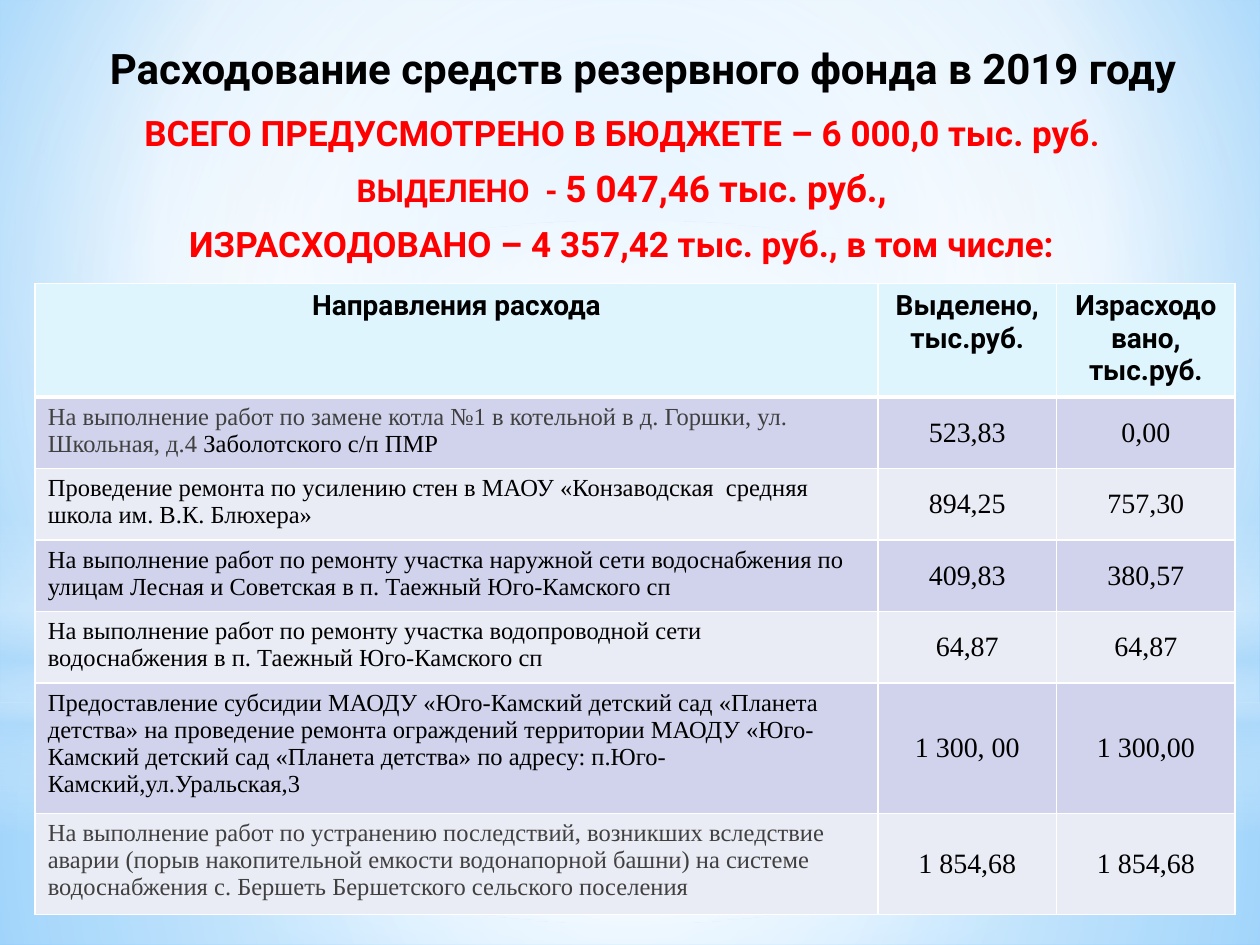
"""Build the slide on reserve fund spending in 2019."""
from dataclasses import dataclass

from lxml.etree import SubElement
from pptx import Presentation
from pptx.dml.color import RGBColor
from pptx.enum.shapes import MSO_SHAPE
from pptx.enum.text import MSO_ANCHOR, PP_ALIGN
from pptx.oxml.ns import qn
from pptx.util import Cm, Pt

HEADING_FONT, BODY_FONT = "Roboto", "Times New Roman"
BLACK, GREY, RED, WHITE = "000000", "404040", "FF0000", "FFFFFF"
PALE_BLUE = "B4DCFA"
HEADER_FILL, ROW_FILLS = "DFF5FD", ("D0D3EB", "E9EBF5")
CENTRE = (50, 50, 50, 50)
THIN, THICK = Pt(1), Pt(3)


@dataclass
class Stop:
    position: int
    colour: str
    opacity: int = 100


@dataclass
class Glow:
    top: float
    height: float
    stops: list[Stop]
    focus: tuple | None = CENTRE
    kind: MSO_SHAPE = MSO_SHAPE.RECTANGLE


@dataclass
class Piece:
    text: str
    size: int
    colour: str


@dataclass
class Expense:
    purpose: list[tuple[str, str]]
    allocated: str
    spent: str
    height: float


BACKGROUND = [Stop(0, "9ED5FF"), Stop(60, WHITE), Stop(100, "5BB9FF")]
GLOWS = [
    Glow(14.17, 4.88, [Stop(0, WHITE, 91), Stop(37, WHITE, 76), Stop(100, PALE_BLUE, 79)]),
    Glow(0, 14.17, [Stop(0, WHITE, 89), Stop(48, WHITE, 62), Stop(100, PALE_BLUE, 79)]),
    Glow(10.46, 6.35, [Stop(0, WHITE, 0), Stop(29, WHITE, 30), Stop(45, PALE_BLUE, 40),
                       Stop(55, WHITE, 26), Stop(65, PALE_BLUE, 60), Stop(100, WHITE, 0)], None),
    Glow(4.45, 14.17, [Stop(0, WHITE), Stop(56, WHITE, 0)], CENTRE, MSO_SHAPE.OVAL),
]
TITLE = [[Piece("Расходование средств резервного фонда в 2019 году", 24, BLACK)]]
TOTALS = [
    [Piece("ВСЕГО ПРЕДУСМОТРЕНО В БЮДЖЕТЕ – 6 000,0 тыс. руб", 20, RED), Piece(".", 18, RED)],
    [Piece("ВЫДЕЛЕНО  - ", 18, RED), Piece("5 047,46 тыс. руб.,", 21, RED)],
    [Piece("ИЗРАСХОДОВАНО – 4 357,42 тыс. руб., в том числе:", 20, RED)],
]
HEADERS = ["Направления расхода", "Выделено, тыс.руб.", "Израсходовано, тыс.руб."]
HEADER_HEIGHT = 2.24
COLUMN_WIDTHS = [16.99, 3.6, 3.6]
EXPENSES = [
    Expense([("На выполнение работ по замене котла №1 в котельной в д. Горшки, ул. Школьная, д.4 ", GREY),
             ("Заболотского с/п ПМР", BLACK)], "523,83", "0,00", 1.34),
    Expense([("Проведение ремонта по усилению стен в МАОУ «Конзаводская  средняя школа "
              "им. В.К. Блюхера»", BLACK)], "894,25", "757,30", 1.34),
    Expense([("На выполнение работ по ремонту участка наружной сети водоснабжения по улицам "
              "Лесная и Советская в п. Таежный Юго-Камского сп", BLACK)], "409,83", "380,57", 1.34),
    Expense([("На выполнение работ по ремонту участка водопроводной сети водоснабжения "
              "в п. Таежный Юго-Камского сп", BLACK)], "64,87", "64,87", 1.4),
    Expense([("Предоставление субсидии МАОДУ «Юго-Камский детский сад «Планета детства» "
              "на проведение ремонта ограждений территории МАОДУ «Юго-Камский детский сад "
              "«Планета детства» по адресу: п.Юго-Камский,ул.Уральская,3", BLACK)],
            "1 300, 00", "1 300,00", 2.42),
    Expense([("На выполнение работ по устранению последствий, возникших вследствие аварии "
              "(порыв накопительной емкости водонапорной башни) на системе водоснабжения "
              "с. Бершеть Бершетского сельского поселения", GREY)], "1 854,68", "1 854,68", 1.92),
]


def colour_of(value: str) -> RGBColor:
    """Turn a hex string into a colour."""
    return RGBColor.from_string(value)


def paint_gradient(owner, stops: list[Stop], focus: tuple | None) -> None:
    """Fill the owner with a circular gradient, or a vertical one without a focus."""
    owner_fill = owner.fill if hasattr(owner, "fill") else owner.background.fill
    owner_fill.gradient()
    gradient = owner.element.find(".//" + qn("a:gradFill"))
    for child in list(gradient):
        gradient.remove(child)
    stop_list = SubElement(gradient, qn("a:gsLst"))
    for stop in stops:
        entry = SubElement(stop_list, qn("a:gs"), pos=str(stop.position * 1000))
        colour = SubElement(entry, qn("a:srgbClr"), val=stop.colour)
        if stop.opacity < 100:
            SubElement(colour, qn("a:alpha"), val=str(stop.opacity * 1000))
    if focus is None:
        SubElement(gradient, qn("a:lin"), ang="5400000", scaled="0")
        return
    circle = SubElement(gradient, qn("a:path"), path="circle")
    sides = {side: str(percent * 1000) for side, percent in zip("ltrb", focus)}
    SubElement(circle, qn("a:fillToRect"), **sides)


def draw_glow(slide, glow: Glow) -> None:
    """Draw one full-width soft backdrop shape."""
    shape = slide.shapes.add_shape(glow.kind, 0, Cm(glow.top), Cm(25.4), Cm(glow.height))
    shape.shadow.inherit = False
    shape.line.fill.background()
    paint_gradient(shape, glow.stops, glow.focus)


def write(paragraph, pieces: list[Piece], font: str, bold: bool, align: PP_ALIGN) -> None:
    """Write the pieces as runs of one paragraph."""
    paragraph.alignment = align
    paragraph.font.name, paragraph.font.bold = font, bold
    for piece in pieces:
        run = paragraph.add_run()
        run.text = piece.text
        run.font.name, run.font.bold = font, bold
        run.font.size = Pt(piece.size)
        run.font.color.rgb = colour_of(piece.colour)


def draw_text(slide, place: tuple, lines: list[list[Piece]], anchor: MSO_ANCHOR) -> list:
    """Draw a centred bold text box and return its paragraphs."""
    frame = slide.shapes.add_textbox(*map(Cm, place)).text_frame
    frame.word_wrap = True
    frame.vertical_anchor = anchor
    for index, line in enumerate(lines):
        paragraph = frame.add_paragraph() if index else frame.paragraphs[0]
        write(paragraph, line, HEADING_FONT, True, PP_ALIGN.CENTER)
    return list(frame.paragraphs)


def style_cell(cell, fill: str, top: int = THIN, bottom: int = THIN) -> None:
    """Give a cell its fill and white borders."""
    properties = cell._tc.get_or_add_tcPr()
    for side, width in (("L", THIN), ("R", THIN), ("T", top), ("B", bottom)):
        border = SubElement(properties, qn(f"a:ln{side}"), w=str(width))
        SubElement(SubElement(border, qn("a:solidFill")), qn("a:srgbClr"), val=WHITE)
    cell.fill.solid()
    cell.fill.fore_color.rgb = colour_of(fill)


def draw_table(slide) -> None:
    """Draw the table of expenses."""
    heights = [HEADER_HEIGHT] + [expense.height for expense in EXPENSES]
    table = slide.shapes.add_table(len(heights), len(HEADERS), Cm(0.71), Cm(5.72),
                                   Cm(sum(COLUMN_WIDTHS)), Cm(sum(heights))).table
    for column, width in zip(table.columns, COLUMN_WIDTHS):
        column.width = Cm(width)
    for row, height in zip(table.rows, heights):
        row.height = Cm(height)
    for column, header in enumerate(HEADERS):
        cell = table.cell(0, column)
        style_cell(cell, HEADER_FILL, bottom=THICK)
        write(cell.text_frame.paragraphs[0], [Piece(header, 16, BLACK)],
              HEADING_FONT, True, PP_ALIGN.CENTER)
    for row, expense in enumerate(EXPENSES, start=1):
        purpose = [Piece(text, 14, colour) for text, colour in expense.purpose]
        amounts = [[Piece(amount, 16, BLACK)] for amount in (expense.allocated, expense.spent)]
        for column, pieces in enumerate([purpose, *amounts]):
            cell = table.cell(row, column)
            style_cell(cell, ROW_FILLS[(row - 1) % 2], top=THICK if row == 1 else THIN)
            cell.vertical_anchor = MSO_ANCHOR.MIDDLE if column else MSO_ANCHOR.TOP
            write(cell.text_frame.paragraphs[0], pieces, BODY_FONT, False,
                  PP_ALIGN.CENTER if column else PP_ALIGN.LEFT)


def main() -> None:
    """Build and save the presentation."""
    presentation = Presentation()
    presentation.slide_width, presentation.slide_height = Cm(25.4), Cm(19.05)
    slide = presentation.slides.add_slide(presentation.slide_layouts[6])
    paint_gradient(slide, BACKGROUND, (20, 10, 20, 60))
    for glow in GLOWS:
        draw_glow(slide, glow)
    draw_text(slide, (1.5, 0.61, 22.94, 1.5), TITLE, MSO_ANCHOR.MIDDLE)
    for paragraph in draw_text(slide, (0.43, 2.13, 24.08, 16.48), TOTALS, MSO_ANCHOR.TOP):
        paragraph.space_before, paragraph.space_after = Pt(4), Pt(3)
        properties = paragraph._p.get_or_add_pPr()
        properties.set("marL", str(Cm(0.64)))
        properties.set("indent", str(Cm(-0.51)))
    draw_table(slide)
    presentation.save("out.pptx")


if __name__ == "__main__":
    main()
